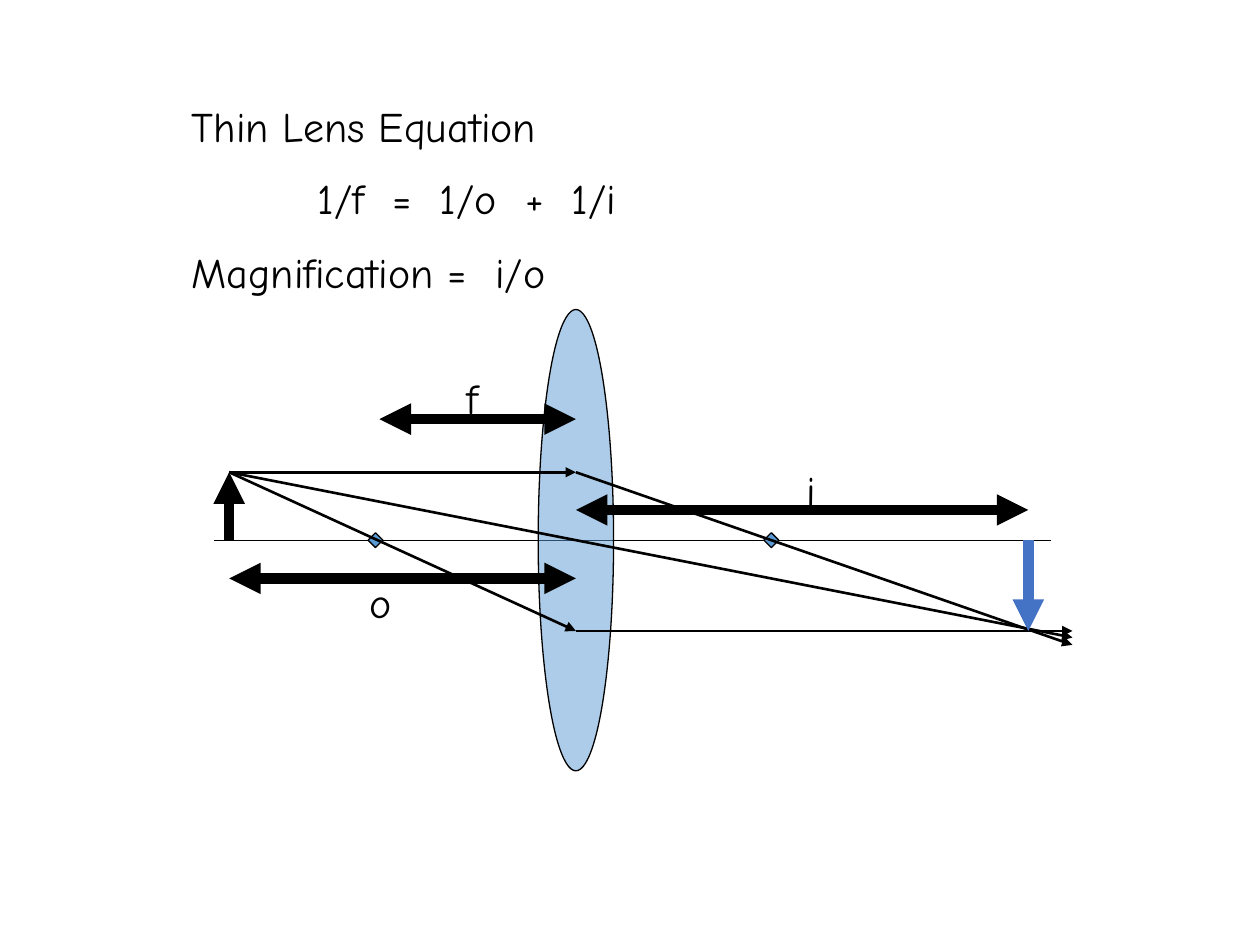
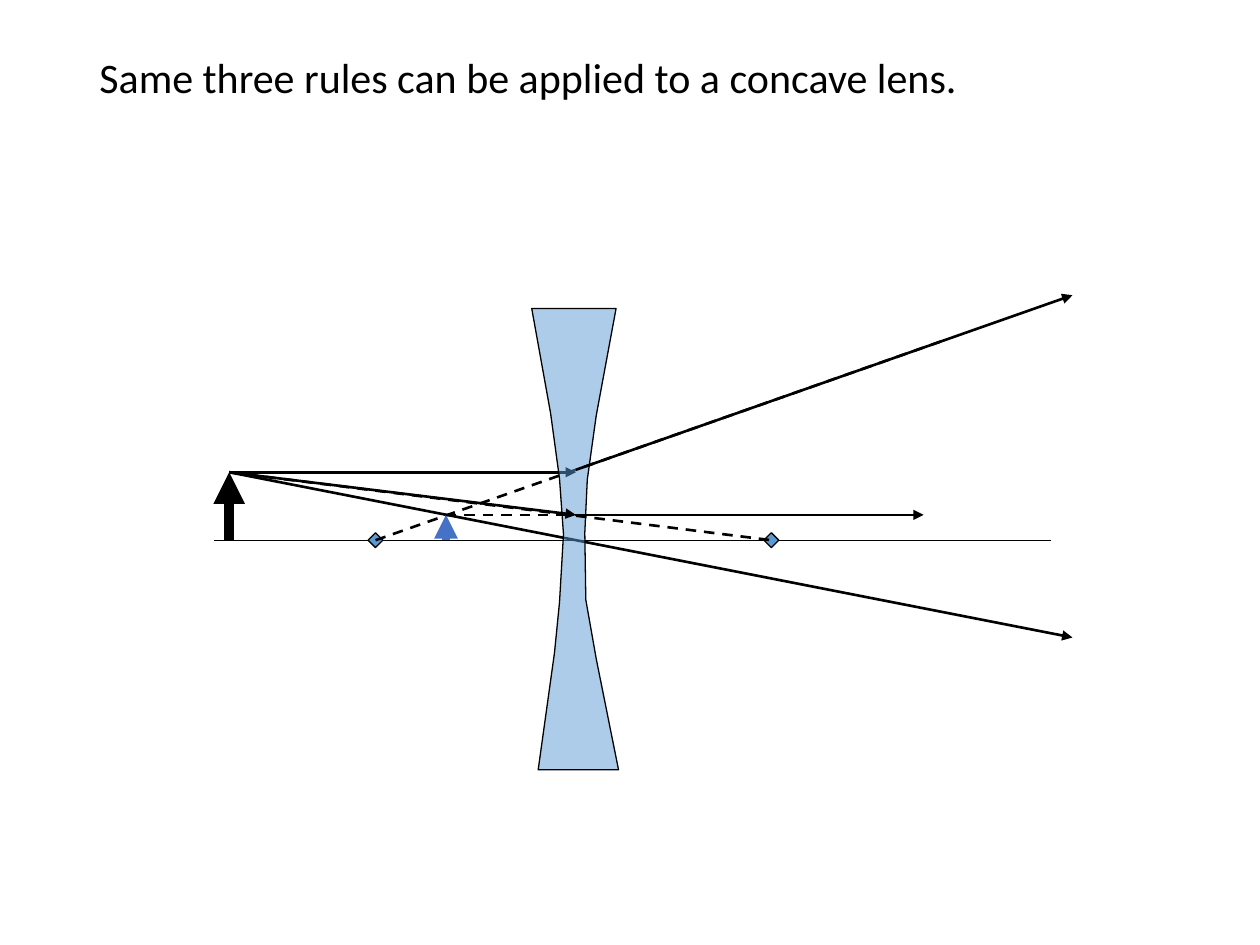
from lxml.etree import SubElement
from pptx import Presentation
from pptx.dml.color import RGBColor
from pptx.enum.dml import MSO_LINE
from pptx.enum.shapes import MSO_CONNECTOR as Connector, MSO_SHAPE as Shape
from pptx.enum.text import MSO_ANCHOR as Anchor, MSO_AUTO_SIZE as AutoSize, PP_ALIGN as Align
from pptx.oxml.ns import qn
from pptx.util import Cm, Pt

COLORS = {"ink": "000000", "glass": "5B9BD5", "image": "4472C4"}
FONTS = {"hand": "Comic Neue", "plain": "Calibri"}
FRAME_FORMAT = {"word_wrap": True, "auto_size": AutoSize.NONE, "vertical_anchor": Anchor.TOP}
THIN, RAY, SMALL_ARROW, BIG_ARROW = 0.75, 1.5, 4.5, 6

DIAGRAM = (4.32, 5.94)
AXIS_Y, AXIS_END = 4.95, 16.87
LENS_X, EXIT_X = 7.29, 17.3
OBJECT_X = 0.3
FOCI = [(3.25, AXIS_Y), (11.23, AXIS_Y)]
TIP = (OBJECT_X, 3.58)
CENTER = (LENS_X, AXIS_Y)
CONCAVE_OUTLINE = [
    (6.6, 9.58), (8.15, 9.58), (7.7, 7.34), (7.49, 6.15), (7.47, 4.8),
    (7.52, 3.73), (7.7, 2.44), (8.1, 0.28), (6.4, 0.28), (6.78, 2.39),
    (6.96, 3.71), (7.04, 4.83), (6.96, 6.2), (6.86, 7.21), (6.53, 9.58),
]


def color(name):
    """Return the named colour."""
    return RGBColor.from_string(COLORS[name])


def apply(target, values):
    """Set each named attribute on the target."""
    for name, value in values.items():
        setattr(target, name, value)


def along(start, through, x):
    """Return the point at x on the line through two points."""
    slope = (through[1] - start[1]) / (through[0] - start[0])
    return x, start[1] + slope * (x - start[0])


def place(box, point):
    """Turn a point inside the box into slide lengths."""
    return [Cm(origin + offset) for origin, offset in zip(box, point)]


def add_line(page, box, start, end, width=RAY, ink="ink", heads=("tailEnd",), dashed=False):
    """Draw a straight line with optional arrowheads."""
    line = page.shapes.add_connector(Connector.STRAIGHT, *place(box, start), *place(box, end))
    line.line.width = Pt(width)
    line.line.color.rgb = color(ink)
    if dashed:
        line.line.dash_style = MSO_LINE.DASH
    properties = line._element.spPr
    for head in heads:
        SubElement(properties.find(qn("a:ln")), qn(f"a:{head}"), type="triangle")
    SubElement(properties, qn("a:effectLst"))


def paint(shape, opacity=100):
    """Give a shape the glass fill and a thin outline."""
    shape.shadow.inherit = False
    shape.fill.solid()
    shape.fill.fore_color.rgb = color("glass")
    shape.line.color.rgb = color("ink")
    shape.line.width = Pt(THIN)
    if opacity < 100:
        tint = shape._element.spPr.find(qn("a:solidFill"))[0]
        SubElement(tint, qn("a:alpha"), val=str(opacity * 1000))


def add_centered(page, box, kind, center, width, height, opacity=100):
    """Draw a preset shape around its centre."""
    corner = (center[0] - width / 2, center[1] - height / 2)
    paint(page.shapes.add_shape(kind, *place(box, corner), Cm(width), Cm(height)), opacity)


def add_concave_lens(page, box):
    """Draw the outline of the concave lens."""
    points = [place(box, point) for point in CONCAVE_OUTLINE]
    builder = page.shapes.build_freeform(*points[0])
    builder.add_line_segments(points[1:], close=True)
    paint(builder.convert_to_shape(), 50)


def add_axis(page, box):
    """Draw the optical axis."""
    add_line(page, box, (0, AXIS_Y), (AXIS_END, AXIS_Y), THIN, heads=())


def add_object(page, box):
    """Draw the foci, the object arrow and the two rays both lenses share."""
    add_line(page, box, TIP, along(TIP, CENTER, EXIT_X))
    for focus in FOCI:
        add_centered(page, box, Shape.DIAMOND, focus, 0.3, 0.3)
    add_line(page, box, (OBJECT_X, AXIS_Y), TIP, BIG_ARROW)
    add_line(page, box, TIP, (LENS_X, TIP[1]))


def style_para(para, font, text):
    """Write a paragraph in the deck's text style."""
    para.alignment = Align.LEFT
    span = para.add_run()
    span.text = text
    apply(span.font, {"name": FONTS[font], "size": Pt(24), "bold": False})
    span.font.color.rgb = color("ink")


def fill_placeholder(holder, box, font, lines, spacing=1.0, gap=0):
    """Move a placeholder to the box and write unbulleted (text, indent) lines."""
    sides = ("left", "top", "width", "height")
    apply(holder, {side: Cm(length) for side, length in zip(sides, box)})
    frame = holder.text_frame
    apply(frame, FRAME_FORMAT)
    for number, (text, indent) in enumerate(lines):
        para = frame.add_paragraph() if number else frame.paragraphs[0]
        apply(para, {"line_spacing": spacing, "space_before": Pt(gap if number else 0)})
        properties = para._p.get_or_add_pPr()
        properties.set("marL", str(Cm(indent)))
        properties.set("indent", "0")
        SubElement(properties, qn("a:buNone"))
        style_para(para, font, text)


def add_label(page, box, corner, text):
    """Write the letter of a measured distance."""
    label = page.shapes.add_textbox(*place(box, corner), Cm(0.69), Cm(1.04))
    label.text_frame.word_wrap = False
    style_para(label.text_frame.paragraphs[0], "hand", text)


def draw_convex(page, box):
    """Draw the convex lens, its rays and the measured distances."""
    image_x, image_y = 16.41, 6.78
    entry, lower = (LENS_X, TIP[1]), (LENS_X, image_y)
    add_axis(page, box)
    add_centered(page, box, Shape.OVAL, CENTER, 1.52, 9.3, 50)
    add_object(page, box)
    add_line(page, box, entry, along(entry, FOCI[1], EXIT_X))
    add_line(page, box, TIP, lower)
    add_line(page, box, lower, (EXIT_X, image_y))
    add_line(page, box, (image_x, AXIS_Y), (image_x, image_y), BIG_ARROW, "image")
    distances = [
        ("f", 3.33, LENS_X, 2.51, (4.83, 1.45)),
        ("o", OBJECT_X, LENS_X, 5.72, (2.87, 5.56)),
        ("i", LENS_X, image_x, 4.34, (11.68, 3.3)),
    ]
    for text, left, right, y, corner in distances:
        add_line(page, box, (left, y), (right, y), BIG_ARROW, heads=("headEnd", "tailEnd"))
        add_label(page, box, corner, text)


def draw_concave(page, box):
    """Draw the concave lens, its rays and their dashed extensions."""
    image_x, image_y = 4.67, 4.44
    upper, lower = (LENS_X, 3.53), (LENS_X, image_y)
    add_axis(page, box)
    add_object(page, box)
    add_line(page, box, FOCI[0], along(FOCI[0], upper, 14.71), heads=(), dashed=True)
    add_concave_lens(page, box)
    add_line(page, box, upper, along(FOCI[0], upper, EXIT_X))
    add_line(page, box, (image_x, AXIS_Y), (image_x, image_y), SMALL_ARROW, "image")
    add_line(page, box, TIP, FOCI[1], heads=(), dashed=True)
    add_line(page, box, TIP, lower)
    add_line(page, box, (image_x, image_y), (9.04, image_y), heads=(), dashed=True)
    add_line(page, box, lower, (14.3, image_y))


def add_equation_slide(deck):
    """Add the slide with the thin lens equation."""
    page = deck.slides.add_slide(deck.slide_layouts[1])
    title, body = page.placeholders
    fill_placeholder(title, (3.61, 1.9, 18.2, 1.45), "hand", [("Thin Lens Equation", 0)])
    lines = [("1/f  =  1/o  +  1/i", 2.54), ("Magnification =  i/o", 0)]
    fill_placeholder(body, (3.61, 3.35, 18.2, 6.35), "hand", lines, gap=13.5)
    draw_convex(page, DIAGRAM)


def add_concave_slide(deck):
    """Add the slide with the concave lens."""
    page = deck.slides.add_slide(deck.slide_layouts[5])
    lines = [("Same three rules can be applied to a concave lens.", 0)]
    fill_placeholder(page.shapes.title, (1.75, 1.02, 21.9, 3.68), "plain", lines, spacing=0.9)
    draw_concave(page, DIAGRAM)


def main():
    """Build and save the deck."""
    deck = Presentation()
    apply(deck, {"slide_width": Cm(25.4), "slide_height": Cm(19.05)})
    add_equation_slide(deck)
    add_concave_slide(deck)
    deck.save("out.pptx")


if __name__ == "__main__":
    main()
